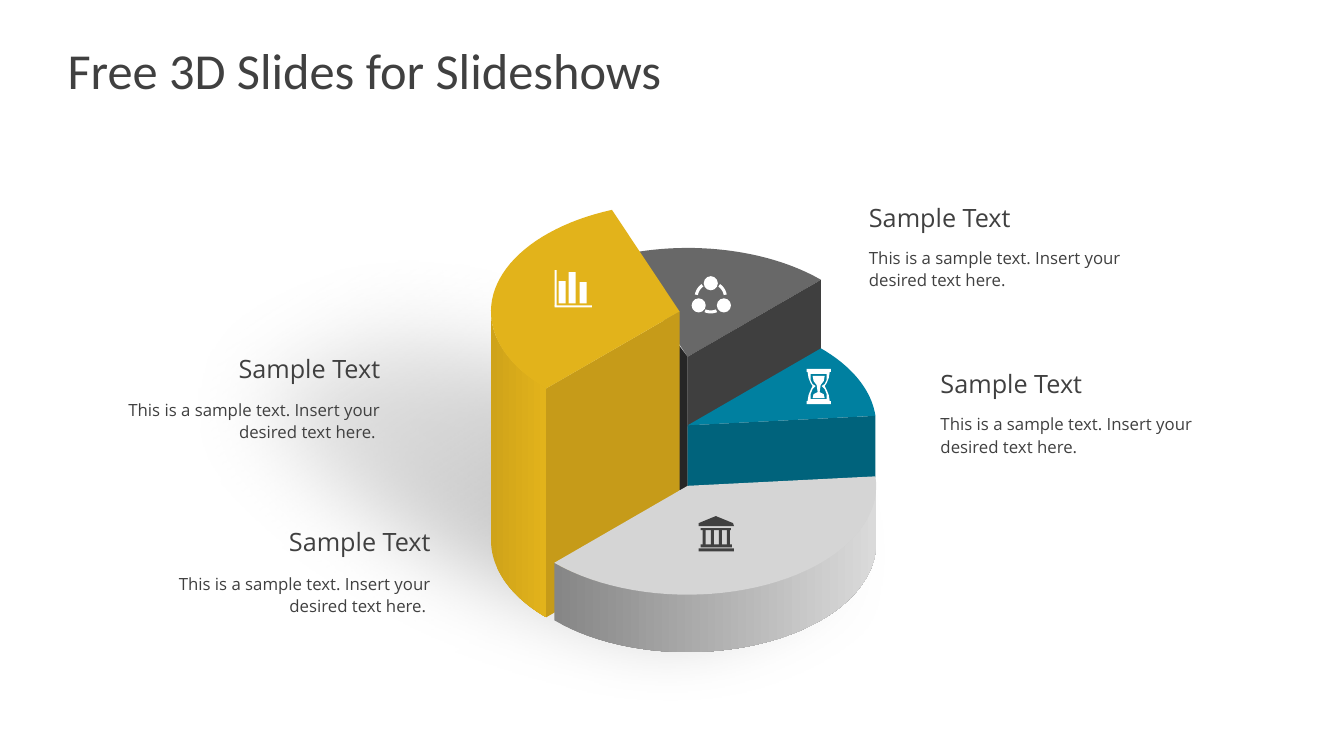
"""Build a slide with a stepped 3D pie, four icons and four captions."""
from math import cos, radians, sin

from lxml.etree import SubElement
from pptx import Presentation
from pptx.dml.color import RGBColor
from pptx.enum.shapes import MSO_SHAPE
from pptx.enum.text import MSO_ANCHOR, PP_ALIGN
from pptx.oxml.ns import qn
from pptx.util import Inches, Pt

TITLE = "Free 3D Slides for Slideshows"
HEAD = "Sample Text"
BODY = "This is a sample text. Insert your desired text here."
CAPTIONS = [
    (1.17, 3.46, 3.9, "right"),
    (1.67, 5.17, 5.62, "right"),
    (8.52, 1.96, 2.39, "left"),
    (9.23, 3.6, 4.04, "left"),
]
THEME = {
    "ink": "404040", "white": "FFFFFF", "shade": "808080",
    "gold": "E2B31B", "gold wall": "CFA31A", "gold face": "C69B19",
    "gray": "686868", "gray face": "3F3F3F", "gray edge": "262626",
    "teal": "0080A0", "teal face": "00637C",
    "silver": "D5D5D5", "silver wall": "868686", "silver end": "DADADA",
    "title": 36, "head": 18, "body": 12,
    "title font": "Calibri", "font": "Open Sans",
}
PIE = (1.87, 1.08)
SLICES = {
    "gray": (6.82, 3.54, 45, 111, 0.69),
    "teal": (6.82, 4.22, 5, 45, 0.61),
    "gold": (6.74, 3.09, 111, 225, 2.27),
    "silver": (6.82, 4.82, 225, 365, 0.57),
}
BANK = [
    (6.95, 5.24, 0.3, 0.02), (6.95, 5.4, 0.31, 0.03), (6.93, 5.44, 0.35, 0.03),
    *[(6.97 + 0.08 * i, 5.25, 0.03, 0.16) for i in range(4)],
]
ROOF = [(7.1, 5.12), (7.27, 5.19), (7.28, 5.22), (6.93, 5.22), (6.93, 5.19)]
BARS = [
    (5.5, 2.68, 0.02, 0.36), (5.5, 3.03, 0.37, 0.02),
    (5.54, 2.79, 0.07, 0.22), (5.64, 2.7, 0.07, 0.31), (5.75, 2.8, 0.07, 0.21),
]
NODES = [(6.98, 2.74), (6.86, 2.96), (7.11, 2.96)]
LINKS = [(10, 55), (125, 170), (247, 293)]
GLASS = [
    [(0.12, 3.66), (0.12, 3.69), (0.11, 3.69), (0.1, 3.75), (0.08, 3.8),
     (0.06, 3.83), (0.08, 3.87), (0.1, 3.92), (0.11, 3.98), (0.12, 3.98),
     (0.12, 4.01)],
    [(0.08, 3.71), (0.08, 3.77), (0.06, 3.81), (0.03, 3.83), (0.06, 3.86),
     (0.08, 3.91), (0.08, 3.96)],
    [(0.06, 3.73), (0.05, 3.78), (0.02, 3.82), (0.01, 3.89), (0.05, 3.91),
     (0.06, 3.95)],
]

deck = Presentation()
deck.slide_width, deck.slide_height = Inches(13.33), Inches(7.5)
slide = deck.slides.add_slide(deck.slide_layouts[6])
shapes = slide.shapes


def color(name):
    return RGBColor.from_string(THEME[name])


def blend(shape, stops, angle):
    shape.fill.gradient()
    shape.fill.gradient_angle = angle
    for stop, (place, name) in zip(shape.fill.gradient_stops, stops):
        stop.position, stop.color.rgb = place, color(name)


def paint(shape, name):
    shape.shadow.inherit = False
    shape.line.fill.background()
    shape.fill.solid()
    shape.fill.fore_color.rgb = color(name)
    return shape


def block(kind, box, name):
    return paint(shapes.add_shape(kind, *map(Inches, box)), name)


def outline(name, *loops):
    pen = None
    for loop in loops:
        first, *rest = [(Inches(x), Inches(y)) for x, y in loop]
        if pen:
            pen.move_to(*first)
        else:
            pen = shapes.build_freeform(*first)
        pen.add_line_segments(rest, close=True)
    return paint(pen.convert_to_shape(), name)


def arc(x, y, wide, high, start, end):
    turns = [radians(start + (end - start) * i / 40) for i in range(41)]
    return [(x + wide * cos(t), y - high * sin(t)) for t in turns]


def drop(points, depth):
    return points + [(x, y + depth) for x, y in reversed(points)]


def rim(name):
    x, y, start, end, depth = SLICES[name]
    return (x, y), arc(x, y, *PIE, start, end), depth


def wall(name, start, end, stops):
    x, y, _, _, depth = SLICES[name]
    edge = arc(x, y, *PIE, start, end)
    blend(outline(name, drop(edge, depth)), stops, 0)


def top(name):
    tip, edge, _ = rim(name)
    outline(name, [tip] + edge)


def face(name, end):
    tip, edge, depth = rim(name)
    outline(name + " face", drop([tip, edge[end]], depth))


def text(box, words, size, font, align=PP_ALIGN.LEFT, space=None):
    frame = shapes.add_textbox(*map(Inches, box)).text_frame
    frame.word_wrap = True
    frame.text = words
    line = frame.paragraphs[0]
    line.alignment, line.line_spacing = align, space
    run = line.runs[0].font
    run.size, run.name, run.color.rgb = Pt(THEME[size]), THEME[font], color("ink")
    return frame


def shadow():
    oval = block(MSO_SHAPE.OVAL, (1.2, 2.53, 8.21, 4.39), "shade")
    oval.rotation = 17.3
    blend(oval, [(0.29, "shade"), (0.91, "shade")], 140)
    props = oval._element.spPr
    for tint, alpha in zip(props.iter(qn("a:srgbClr")), (61000, 0)):
        SubElement(tint, qn("a:alpha")).set("val", str(alpha))
    soft = SubElement(props.find(qn("a:effectLst")), qn("a:softEdge"))
    soft.set("rad", str(Pt(64)))


def pie():
    top("gray")
    face("gray", 0)
    outline("gray edge", [(6.73, 3.42), (6.82, 3.54), (6.82, 4.86), (6.73, 4.86)])
    top("teal")
    face("teal", 0)
    wall("gold", 180, 225, [(0, "gold wall"), (1, "gold")])
    face("gold", -1)
    top("gold")
    wall("silver", 225, 360, [(0, "silver wall"), (1, "silver end")])
    top("silver")


def icons():
    for boxes, name in ((BANK, "ink"), (BARS, "white")):
        for box in boxes:
            block(MSO_SHAPE.RECTANGLE, box, name)
    outline("ink", ROOF)
    for x, y in NODES:
        block(MSO_SHAPE.OVAL, (x, y, 0.14, 0.14), "white")
    for start, end in LINKS:
        bands = [arc(7.05, 2.95, r, r, start, end) for r in (0.16, 0.13)]
        outline("white", bands[0] + bands[1][::-1])
    halves = [[(8.12 + x, y) for x, y in half]
              + [(8.12 - x, y) for x, y in reversed(half)] for half in GLASS]
    outline("white", *halves)


def main():
    shadow()
    frame = text((0.67, 0.3, 12, 0.78), TITLE, "title", "title font")
    frame.margin_left = frame.margin_right = 0
    frame.vertical_anchor = MSO_ANCHOR.MIDDLE
    pie()
    icons()
    for x, head, body, side in CAPTIONS:
        right = side == "right"
        align = PP_ALIGN.RIGHT if right else PP_ALIGN.LEFT
        text((x, head, 2.7, 0.4), HEAD, "head", "font", align)
        words = BODY + " " if right else BODY
        text((x, body, 2.7, 0.53), words, "body", "font", align, 1.1)
    deck.save("out.pptx")


if __name__ == "__main__":
    main()
